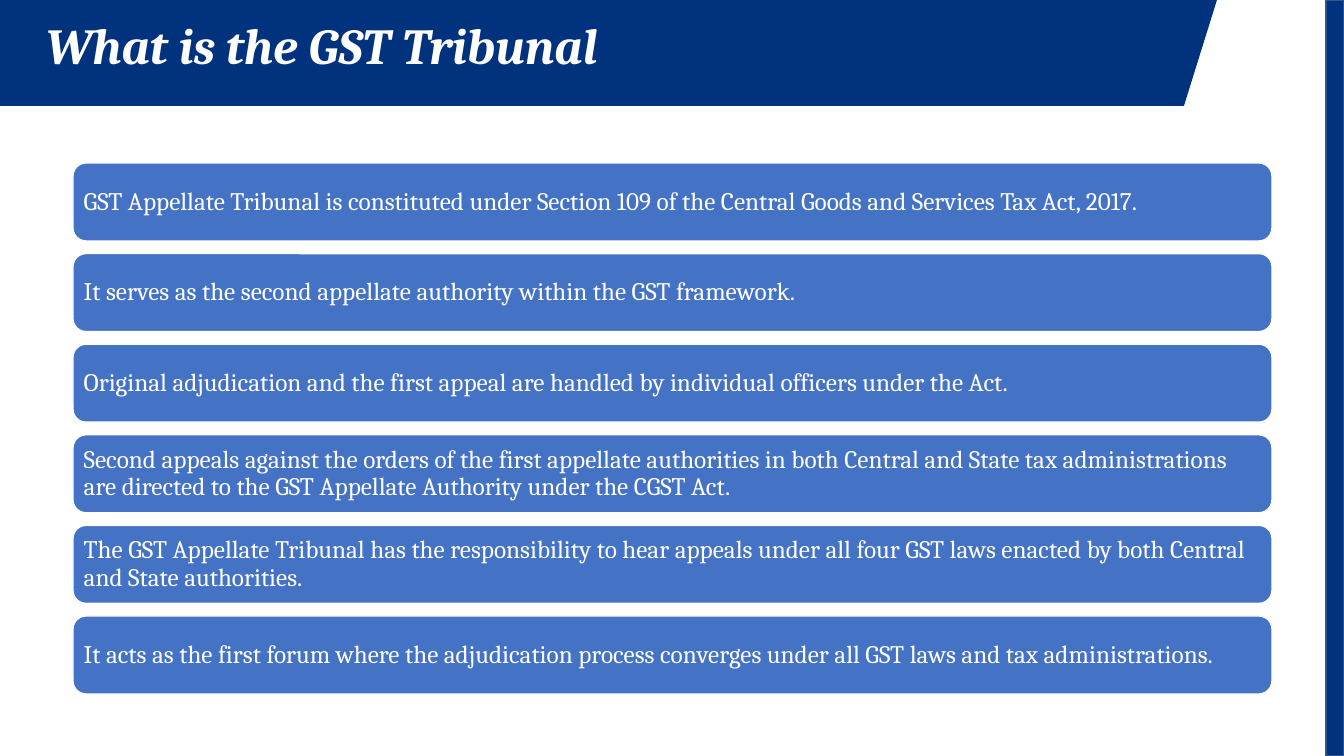
from pptx import Presentation
from pptx.dml.color import RGBColor
from pptx.enum.shapes import MSO_SHAPE
from pptx.enum.text import MSO_ANCHOR, PP_ALIGN
from pptx.util import Inches, Pt

RECTANGLE, ROUNDED = MSO_SHAPE.RECTANGLE, MSO_SHAPE.ROUNDED_RECTANGLE
TOP, MIDDLE = MSO_ANCHOR.TOP, MSO_ANCHOR.MIDDLE
LEFT = PP_ALIGN.LEFT

NAVY = RGBColor(0x00, 0x32, 0x7D)
NAVY_EDGE = RGBColor(0x32, 0x54, 0x91)
BLUE = RGBColor(0x44, 0x72, 0xC4)
WHITE = RGBColor(0xFF, 0xFF, 0xFF)

WIDTH, HEIGHT = 1344, 756
SCALE = Inches(7.5) / HEIGHT

POINTS = [
    "GST Appellate Tribunal is constituted under Section 109 of the Central Goods and Services Tax Act, 2017.",
    "It serves as the second appellate authority within the GST framework.",
    "Original adjudication and the first appeal are handled by individual officers under the Act.",
    "Second appeals against the orders of the first appellate authorities in both Central and State tax "
    "administrations are directed to the GST Appellate Authority under the CGST Act.",
    "The GST Appellate Tribunal has the responsibility to hear appeals under all four GST laws enacted by "
    "both Central and State authorities.",
    "It acts as the first forum where the adjudication process converges under all GST laws and tax administrations.",
]
FIRST_TOP, LAST_TOP = 163, 616


def px(*lengths):
    return [round(length * SCALE) for length in lengths]


def write_text(shape, text, size, anchor=TOP, inset=(10, 5), before=0, bold=False, italic=False):
    frame = shape.text_frame
    frame.word_wrap = True
    frame.vertical_anchor = anchor
    frame.margin_left = frame.margin_right = px(inset[0])[0]
    frame.margin_top = frame.margin_bottom = px(inset[1])[0]
    paragraph = frame.paragraphs[0]
    paragraph.alignment = LEFT
    paragraph.line_spacing = 0.9
    paragraph.space_before = Pt(before)
    run = paragraph.add_run()
    run.text = text
    run.font.name = "Cambria"
    run.font.size = Pt(size)
    run.font.bold = bold
    run.font.italic = italic
    run.font.color.rgb = WHITE


presentation = Presentation()
presentation.slide_width, presentation.slide_height = px(WIDTH, HEIGHT)
slide = presentation.slides.add_slide(presentation.slide_layouts[6])
shapes = slide.shapes

builder = shapes.build_freeform(0, 0, scale=SCALE)
builder.add_line_segments([(0, 106), (1184, 106), (1217, 0)], close=True)
banner = builder.convert_to_shape()
banner.shadow.inherit = False
banner.fill.solid()
banner.fill.fore_color.rgb = NAVY
banner.line.fill.background()

side_strip = shapes.add_shape(RECTANGLE, *px(1326, 0, 18, HEIGHT))
side_strip.shadow.inherit = False
side_strip.fill.solid()
side_strip.fill.fore_color.rgb = NAVY
side_strip.line.color.rgb = NAVY_EDGE
side_strip.line.width = Pt(1)

title = shapes.add_textbox(*px(36, 16, 926, 65))
write_text(title, "What is the GST Tribunal", 36, before=10, bold=True, italic=True)

pitch = (LAST_TOP - FIRST_TOP) / (len(POINTS) - 1)
for index, point in enumerate(POINTS):
    bar = shapes.add_shape(ROUNDED, *px(73, FIRST_TOP + index * pitch, 1199, 78))
    bar.shadow.inherit = False
    bar.fill.solid()
    bar.fill.fore_color.rgb = BLUE
    bar.line.color.rgb = WHITE
    bar.line.width = Pt(1)
    write_text(bar, point, 18, anchor=MIDDLE, inset=(7, 7))

presentation.save("out.pptx")
